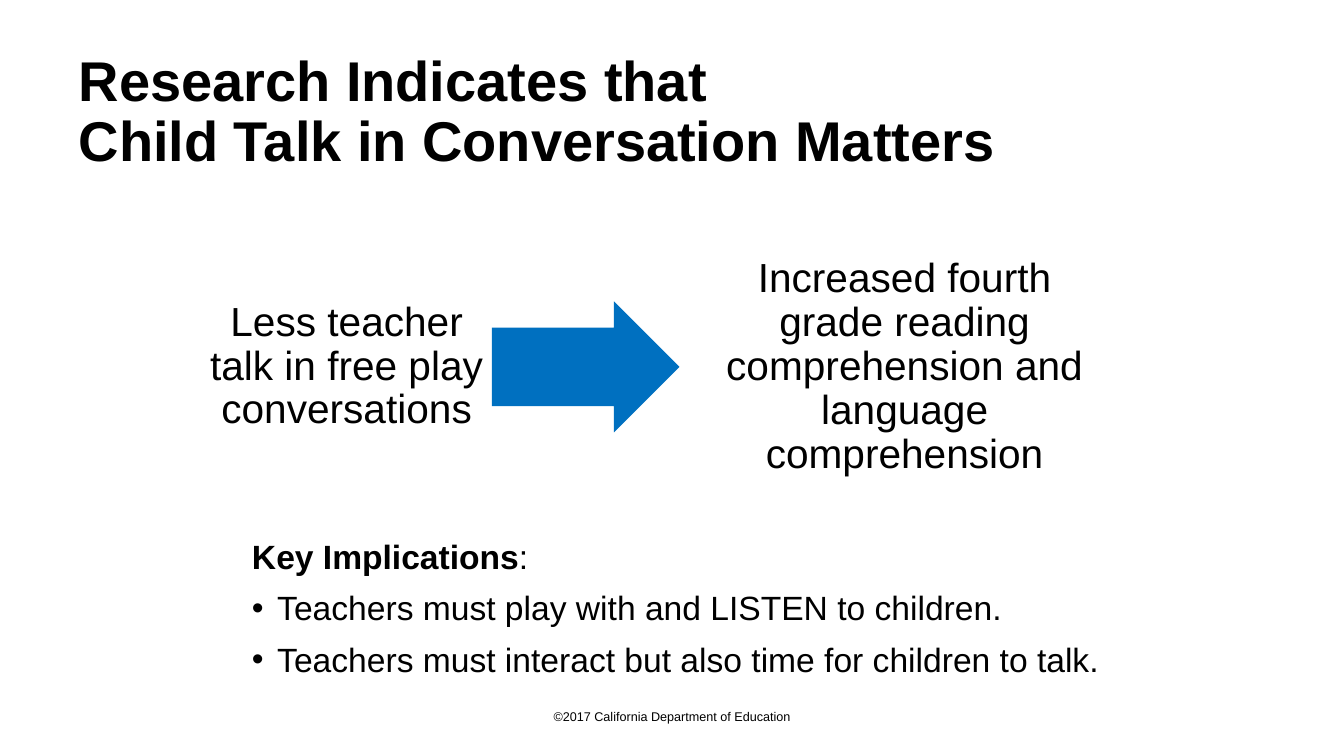
import pptx
import pptx.util
import pptx.dml.color
import pptx.enum.shapes
import pptx.enum.text
import pptx.oxml
import pptx.oxml.ns
from pptx.util import Pt

BLACK = pptx.dml.color.RGBColor(0x00, 0x00, 0x00)
WHITE = pptx.dml.color.RGBColor(0xFF, 0xFF, 0xFF)
BLUE = pptx.dml.color.RGBColor(0x00, 0x70, 0xC0)
FONT = "Arial"

ALIGN = pptx.enum.text.PP_ALIGN
ANCHOR = pptx.enum.text.MSO_ANCHOR
SHAPE = pptx.enum.shapes.MSO_SHAPE


def place(shape, left, top, width, height):
    shape.left, shape.top = Pt(left), Pt(top)
    shape.width, shape.height = Pt(width), Pt(height)


def format_paragraph(paragraph, size, bold=False, align=ALIGN.LEFT):
    paragraph.alignment = align
    paragraph.font.name = FONT
    paragraph.font.size = Pt(size)
    paragraph.font.bold = bold
    paragraph.font.color.rgb = BLACK


def prepare_frame(shape, anchor):
    frame = shape.text_frame
    frame.word_wrap = True
    frame.auto_size = pptx.enum.text.MSO_AUTO_SIZE.NONE
    frame.vertical_anchor = anchor
    return frame


def set_bullet(paragraph, character=None, indent=0):
    """Give the paragraph a hanging bullet, or none at all."""
    properties = paragraph._p.get_or_add_pPr()
    properties.set("marL", str(Pt(indent)))
    properties.set("indent", str(-Pt(indent)))
    tags = [("a:buFont", "typeface", FONT), ("a:buChar", "char", character)]
    if character is None:
        tags = [("a:buNone", None, None)]
    for tag, attribute, value in tags:
        element = pptx.oxml.parse_xml(f"<{tag} {pptx.oxml.ns.nsdecls('a')}/>")
        if attribute:
            element.set(attribute, value)
        position = [child.tag for child in properties].count(pptx.oxml.ns.qn("a:defRPr"))
        properties.insert(len(properties) - position, element)


def add_filled_shape(slide, kind, box, color, adjustments):
    shape = slide.shapes.add_shape(kind, *(Pt(length) for length in box))
    shape.shadow.inherit = False
    shape.fill.solid()
    shape.fill.fore_color.rgb = color
    shape.line.fill.background()
    for index, value in enumerate(adjustments):
        shape.adjustments[index] = value
    return shape


def add_text_box(slide, box):
    return slide.shapes.add_textbox(*(Pt(length) for length in box))


def write_statement(shape, text):
    """Centred statement on one side of the arrow."""
    frame = prepare_frame(shape, ANCHOR.MIDDLE)
    frame.margin_left = frame.margin_right = Pt(8.7)
    frame.margin_top = frame.margin_bottom = Pt(8.7)
    frame.text = text
    paragraph = frame.paragraphs[0]
    format_paragraph(paragraph, 29, align=ALIGN.CENTER)
    paragraph.line_spacing = 0.9


def write_title(title, text):
    place(title, 49, 28.8, 845.3, 104.4)
    frame = prepare_frame(title, ANCHOR.MIDDLE)
    frame.text = text
    format_paragraph(frame.paragraphs[0], 40, bold=True)
    frame.paragraphs[0].line_spacing = 0.9


def write_implications(body, heading, points):
    place(body, 172.8, 379.4, 652.3, 123.8)
    frame = prepare_frame(body, ANCHOR.TOP)
    frame.text = heading
    frame.paragraphs[0].runs[0].font.bold = True
    frame.paragraphs[0].add_run().text = ":"
    for point in points:
        frame.add_paragraph().text = point
    for index, paragraph in enumerate(frame.paragraphs):
        format_paragraph(paragraph, 24)
        paragraph.space_before = Pt(7.7)
        if index:
            set_bullet(paragraph, "•", 18)
        else:
            set_bullet(paragraph)


def main():
    presentation = pptx.Presentation()
    presentation.slide_width, presentation.slide_height = Pt(960), Pt(540)
    slide = presentation.slides.add_slide(presentation.slide_layouts[1])

    # Title
    write_title(slide.shapes.title,
                "Research Indicates that\vChild Talk in Conversation Matters")

    # Cause, arrow, effect
    cause = add_text_box(slide, (139, 176.4, 217.4, 171.4))
    write_statement(cause, "Less teacher talk in free play conversations")
    add_filled_shape(slide, SHAPE.RIGHT_ARROW, (351.4, 215.3, 133.9, 93.6),
                     BLUE, (0.6, 0.5))
    effect = add_filled_shape(slide, SHAPE.ROUNDED_RECTANGLE,
                              (488.2, 171.4, 316.1, 182.2), WHITE, (0.1,))
    write_statement(effect, "Increased fourth grade reading comprehension "
                            "and language comprehension")

    # Key implications
    write_implications(slide.placeholders[1], "Key Implications", (
        "Teachers must play with and LISTEN to children.",
        "Teachers must interact but also time for children to talk.",
    ))

    # Copyright line
    footer = add_text_box(slide, (0, 502.6, 960, 18))
    frame = prepare_frame(footer, ANCHOR.MIDDLE)
    frame.text = "©2017 California Department of Education"
    format_paragraph(frame.paragraphs[0], 9, align=ALIGN.CENTER)

    presentation.save("out.pptx")


if __name__ == "__main__":
    main()
